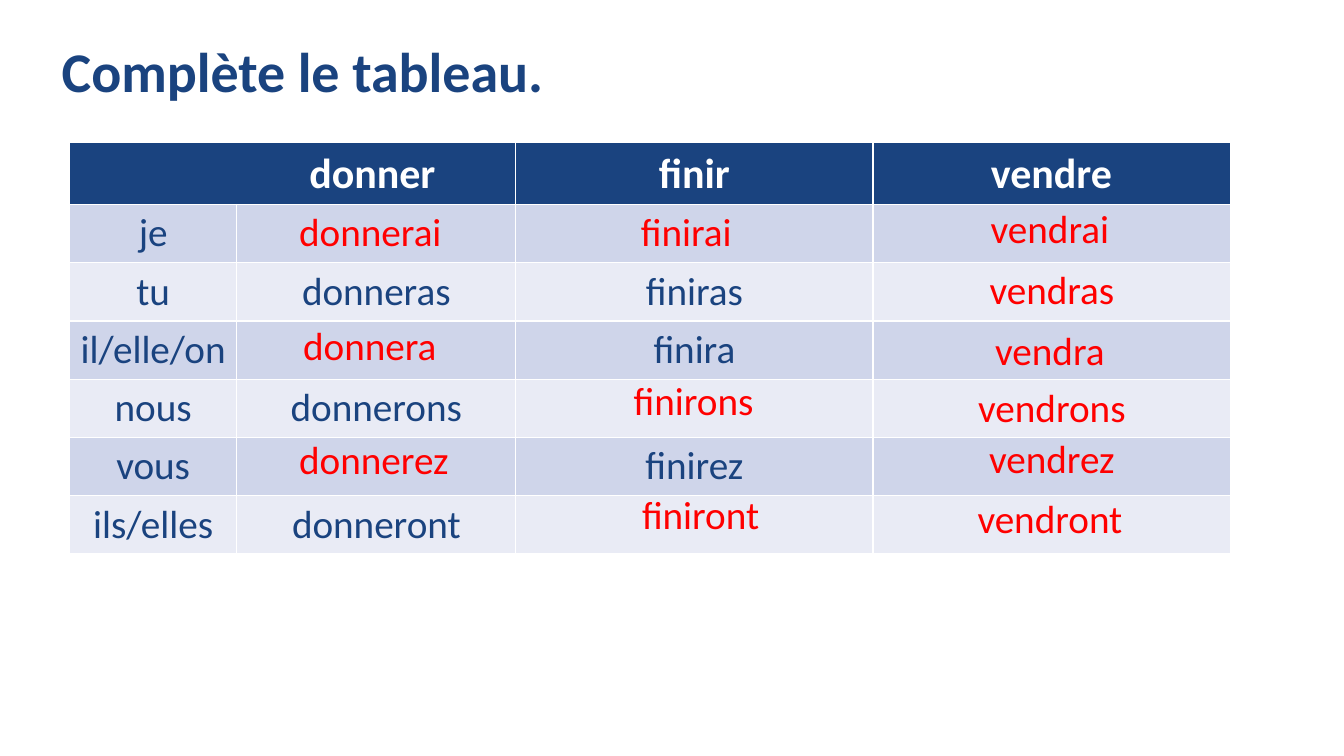
"""Build a slide with a table of French future tense verbs and its answers."""
from pptx import Presentation
from pptx.dml.color import RGBColor as Rgb
from pptx.enum.text import MSO_ANCHOR as Anchor, MSO_AUTO_SIZE as Auto, PP_ALIGN as Align
from pptx.util import Cm, Pt

TITLE = "Complète le tableau."
HEADS = ["donner", "", "finir", "vendre"]
ROWS = [
    ["je", "", "", ""],
    ["tu", "donneras", "finiras", ""],
    ["il/elle/on", "", "finira", ""],
    ["nous", "donnerons", "", ""],
    ["vous", "", "finirez", ""],
    ["ils/elles", "donneront", "", ""],
]
LEFT = [
    ("donnerai", 7.29, 5.11),
    ("donnera", 7.39, 7.98),
    ("donnerez", 7.29, 10.85),
    ("finirai", 15.9, 5.11),
    ("finirons", 15.72, 9.35),
    ("finiront", 15.93, 12.24),
]
MID = [
    ("vendrai", 23.22, 5.03),
    ("vendras", 23.27, 6.55),
    ("vendra", 23.22, 8.1),
    ("vendrons", 23.27, 9.53),
    ("vendrez", 23.27, 10.82),
    ("vendront", 23.22, 12.32),
]
HUES = {"navy": "1A437F", "white": "FFFFFF", "red": "FF0000",
        "dark": "CFD5EA", "light": "E9EBF5"}
WIDTHS = [4.22, 7.03, 9, 9]
HEAD_H, ROW_H = 1.52, 1.44


def hue(name):
    return Rgb.from_string(HUES[name])


def write(frame, text, size, ink, align, bold=False):
    frame.text = text
    par = frame.paragraphs[0]
    par.alignment = align
    for run in par.runs:
        font = run.font
        font.name, font.size, font.bold = "Calibri", Pt(size), bold
        font.color.rgb = hue(ink)
    return par


def add_title(slide):
    box = slide.shapes.title
    box.left, box.top, box.width, box.height = Cm(1.3), Cm(1.02), Cm(29.2), Cm(1.73)
    frame = box.text_frame
    frame.vertical_anchor = Anchor.MIDDLE
    par = write(frame, TITLE, 40, "navy", Align.LEFT, True)
    par.line_spacing = 0.9


def add_verbs(slide):
    count = len(ROWS) + 1
    grid = slide.shapes.add_table(
        count, len(HEADS), Cm(1.75), Cm(3.6),
        Cm(sum(WIDTHS)), Cm(HEAD_H + ROW_H * len(ROWS))).table
    for col, width in zip(grid.columns, WIDTHS):
        col.width = Cm(width)
    for r, line in enumerate([HEADS] + ROWS):
        head = r == 0
        grid.rows[r].height = Cm(HEAD_H if head else ROW_H)
        fill = "navy" if head else ("dark" if r % 2 else "light")
        for c, text in enumerate(line):
            cell = grid.cell(r, c)
            cell.fill.solid()
            cell.fill.fore_color.rgb = hue(fill)
            cell.margin_left = cell.margin_right = Cm(0.2)
            cell.margin_top = cell.margin_bottom = Cm(0.13)
            if head:
                cell.vertical_anchor = Anchor.MIDDLE
            if text:
                write(cell.text_frame, text, 30 if head else 28,
                      "white" if head else "navy", Align.CENTER, head)
    first = grid.cell(0, 0)
    first.merge(grid.cell(0, 1))
    first.margin_left = Cm(WIDTHS[0])


def add_words(slide, words, align):
    for text, x, y in words:
        box = slide.shapes.add_textbox(Cm(x), Cm(y), Cm(6.48), Cm(1.45))
        frame = box.text_frame
        frame.word_wrap = True
        frame.auto_size = Auto.SHAPE_TO_FIT_TEXT
        write(frame, text, 28, "red", align)


def main():
    deck = Presentation()
    deck.slide_width, deck.slide_height = Cm(33.87), Cm(19.05)
    slide = deck.slides.add_slide(deck.slide_layouts[5])
    add_title(slide)
    add_verbs(slide)
    add_words(slide, LEFT, Align.LEFT)
    add_words(slide, MID, Align.CENTER)
    deck.save("out.pptx")


if __name__ == "__main__":
    main()
